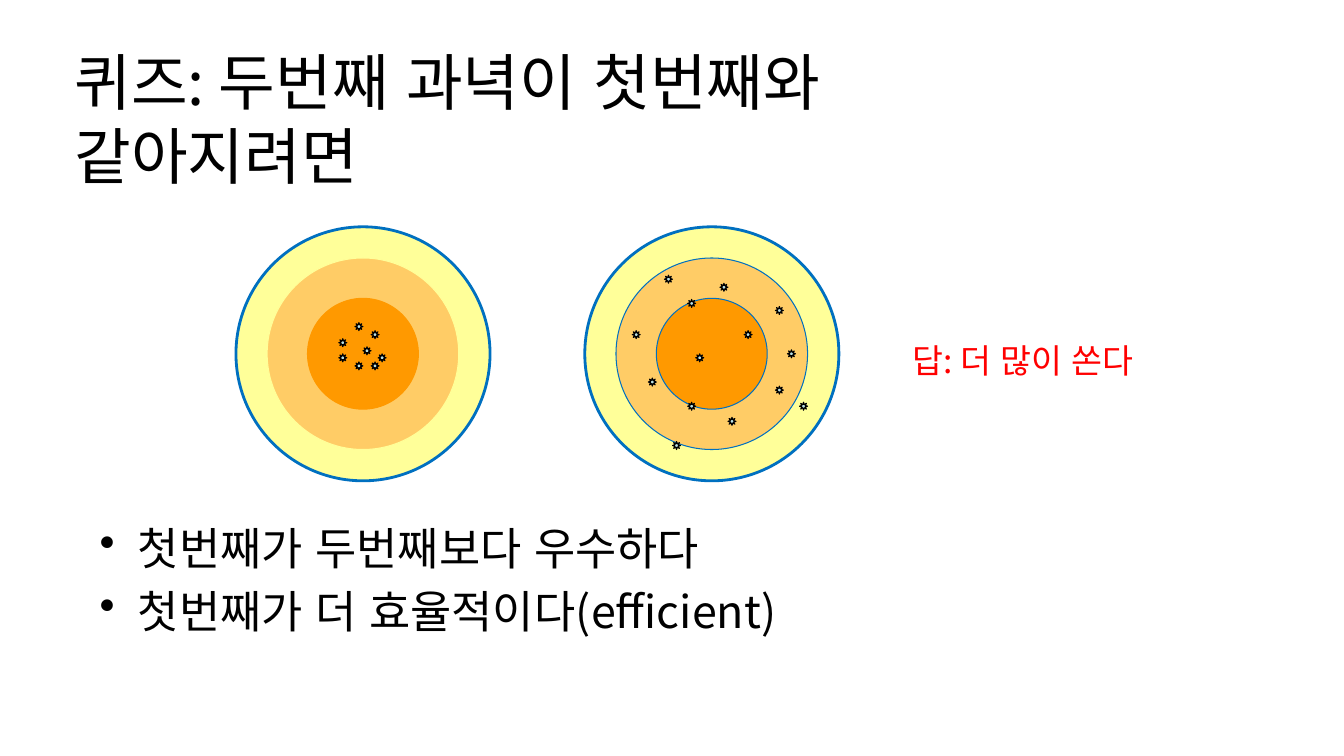
from lxml import etree
from pptx import Presentation, util as u
from pptx.dml.color import RGBColor
from pptx.enum import lang, shapes, text
from pptx.oxml.ns import qn

SCALE = 9144  # EMU per px, at 100 px to the inch
FONT = "Noto Sans CJK KR"
BLUE = "0070C0"
BANDS = ((252, "FFFF99"), (190, "FFCC66"), (110, "FF9900"))
MID = 351
HITS = (
    (336, 336), (336, 351), (360, 344), (352, 359),
    (352, 320), (375, 351), (368, 328), (368, 359),
    (643, 375), (690, 351), (722, 414), (659, 273),
    (667, 438), (793, 399), (738, 328), (714, 281),
    (682, 297), (769, 304), (682, 399), (781, 347),
    (627, 328), (769, 383),
)


def px(n):
    return u.Emu(n * SCALE)


def rgb(code):
    return RGBColor.from_string(code)


class Board:
    def __init__(self, slide):
        self.slide = slide

    def shape(self, kind, box, fill, line, width=0.75):
        item = self.slide.shapes.add_shape(kind, *map(px, box))
        item.shadow.inherit = False
        if fill:
            item.fill.solid()
            item.fill.fore_color.rgb = rgb(fill)
        else:
            item.fill.background()
        item.line.color.rgb = rgb(line)
        item.line.width = u.Pt(width)
        return item

    def disc(self, mid, size, fill, line, width=0.75):
        box = (mid - size // 2, MID - size // 2, size, size)
        self.shape(shapes.MSO_SHAPE.OVAL, box, fill, line, width)

    def target(self, mid, lines):
        """Draw the filled bands, then a bold rim over them."""
        for (size, fill), line in zip(BANDS, lines):
            self.disc(mid, size, fill, line)
        self.disc(mid, BANDS[0][0], None, BLUE, 2)

    def hit(self, left, top):
        self.shape(shapes.MSO_SHAPE.SUN, (left, top, 8, 8), "BBE0E3", "000000")

    def words(self, box, lines, size, color="000000",
              anchor=text.MSO_ANCHOR.TOP, bullet=False):
        frame = self.slide.shapes.add_textbox(*map(px, box)).text_frame
        frame.word_wrap = True
        frame.vertical_anchor = anchor
        frame.text = "\n".join(lines)
        for para in frame.paragraphs:
            for part in (para, *para.runs):
                self.style(part.font, size, color)
            if bullet:
                self.dot(para, size)

    def style(self, font, size, color):
        """Set the font for both Latin and Korean letters."""
        font.name = FONT
        font.size = u.Pt(size)
        font.color.rgb = rgb(color)
        font.language_id = lang.MSO_LANGUAGE_ID.KOREAN
        latin = font._element.find(qn("a:latin"))
        asian = etree.Element(qn("a:ea"), typeface=FONT)
        latin.addnext(asian)

    def dot(self, para, size):
        """Add a hanging bullet and a gap of a fifth of the text size."""
        para.space_before = u.Pt(size / 5)
        props = para._p.get_or_add_pPr()
        props.set("marL", str(px(38)))
        props.set("indent", str(-px(38)))
        mark = etree.Element(qn("a:buChar"), char="•")
        props.find(qn("a:spcBef")).addnext(mark)


def main():
    deck = Presentation()
    deck.slide_width, deck.slide_height = px(1333), px(750)
    board = Board(deck.slides.add_slide(deck.slide_layouts[6]))

    board.words((64, 54, 1032, 125), ["퀴즈: 두번째 과녁이 첫번째와 같아지려면"],
                44, anchor=text.MSO_ANCHOR.MIDDLE)
    board.words((89, 512, 900, 131),
                ["첫번째가 두번째보다 우수하다", "첫번째가 더 효율적이다(efficient)"],
                32, bullet=True)
    board.target(360, ("FFFF99", "FFFF99", "FF9900"))
    board.target(706, (BLUE, BLUE, BLUE))
    for spot in HITS:
        board.hit(*spot)
    board.words((895, 332, 241, 50), ["답: 더 많이 쏜다"], 24, "FF0000")
    deck.save("out.pptx")


if __name__ == "__main__":
    main()
